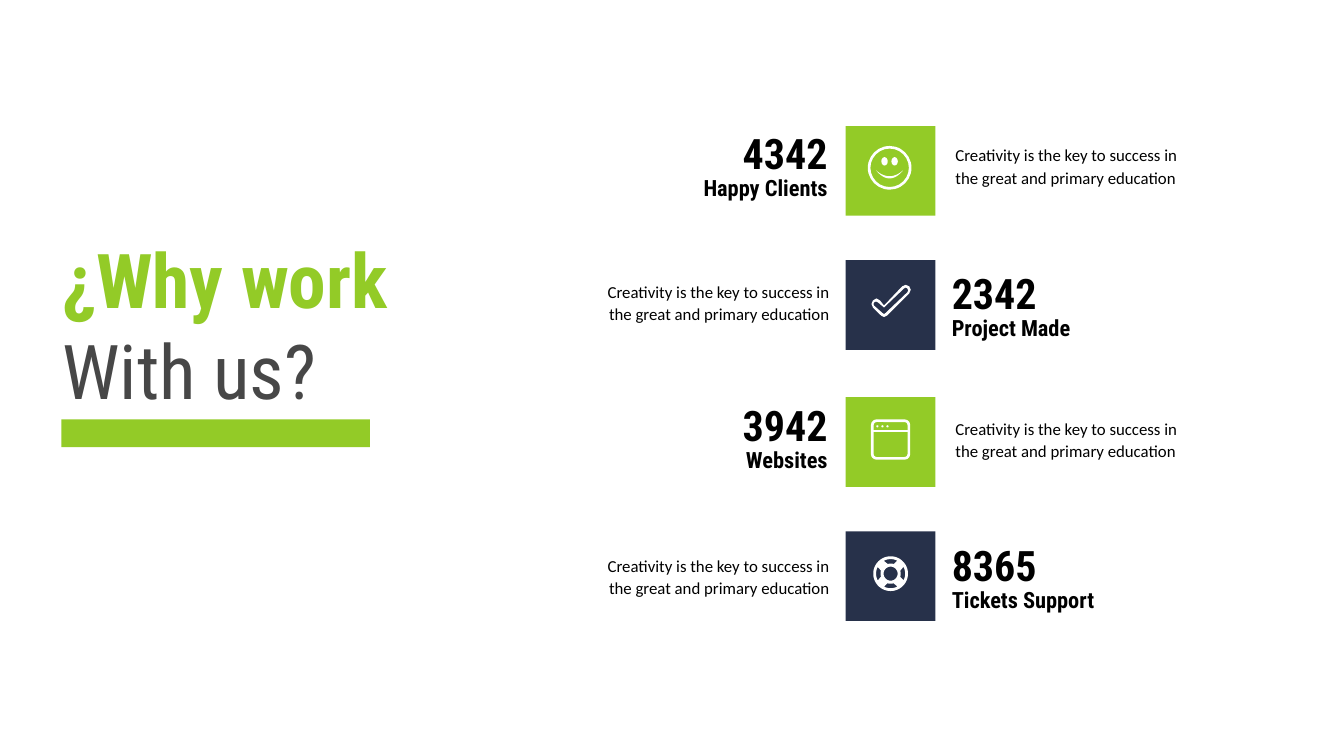
from math import cos, radians, sin

from lxml import etree
from pptx import Presentation
from pptx import util as u
from pptx.dml.color import RGBColor
from pptx.enum import shapes, text
from pptx.oxml.ns import qn

COLORS = {"green": "93CB27", "navy": "27314A", "white": "FFFFFF",
          "black": "000000", "gray": "474747"}
HEADING, BODY = "Roboto Condensed", "Calibri"
LEFT, RIGHT = text.PP_ALIGN.LEFT, text.PP_ALIGN.RIGHT
SHAPE = shapes.MSO_SHAPE
NOTE = "Creativity is the key to success in the great and primary education"
TILE, TILE_LEFT = 64.1, 604.1


class Deck:
    """Holds the style and the current slide; all lengths are in points."""

    def __init__(self, slide):
        self.slide = slide

    def color(self, name):
        return RGBColor.from_string(COLORS[name])

    def paint(self, shape, fill):
        shape.shadow.inherit = False
        shape.fill.solid()
        shape.fill.fore_color.rgb = self.color(fill)
        shape.line.fill.background()
        return shape

    def preset(self, kind, left, top, width, height, fill):
        shape = self.slide.shapes.add_shape(
            kind, u.Pt(left), u.Pt(top), u.Pt(width), u.Pt(height))
        return self.paint(shape, fill)

    def centred(self, kind, x, y, width, height, fill="white"):
        return self.preset(kind, x - width / 2, y - height / 2, width, height, fill)

    def outline(self, x, y, contours, fill="white"):
        """Closed contours given as offsets from (x, y); inner ones are holes."""
        builder = None
        for contour in contours:
            points = [((x + dx) * 100, (y + dy) * 100) for dx, dy in contour]
            if builder is None:
                builder = self.slide.shapes.build_freeform(*points[0], scale=u.Pt(1) / 100)
            else:
                builder.move_to(*points[0])
            builder.add_line_segments(points[1:], close=True)
        return self.paint(builder.convert_to_shape(), fill)

    def line(self, x1, y1, x2, y2, width, color="white"):
        connector = self.slide.shapes.add_connector(
            shapes.MSO_CONNECTOR.STRAIGHT, u.Pt(x1), u.Pt(y1), u.Pt(x2), u.Pt(y2))
        connector.line.width = u.Pt(width)
        connector.line.color.rgb = self.color(color)
        properties = connector._element.find(qn("p:spPr"))
        etree.SubElement(properties, qn("a:effectLst"))

    def run(self, paragraph, words, size, font, color, bold=False):
        run = paragraph.add_run()
        run.text = words
        run.font.size, run.font.name, run.font.bold = u.Pt(size), font, bold
        run.font.color.rgb = self.color(color)

    def frame(self, shape, inset_x=7.2, inset_y=3.6):
        frame = shape.text_frame
        frame.word_wrap = True
        frame.auto_size = text.MSO_AUTO_SIZE.NONE
        frame.vertical_anchor = text.MSO_ANCHOR.TOP
        frame.margin_left = frame.margin_right = u.Pt(inset_x)
        frame.margin_top = frame.margin_bottom = u.Pt(inset_y)
        return frame

    def textbox(self, left, top, width, height, words, size, font, align,
                bold=False, spacing=1.0, insets=(7.2, 3.6)):
        box = self.slide.shapes.add_textbox(
            u.Pt(left), u.Pt(top), u.Pt(width), u.Pt(height))
        paragraph = self.frame(box, *insets).paragraphs[0]
        paragraph.alignment, paragraph.line_spacing = align, spacing
        self.run(paragraph, words, size, font, "black", bold)

    def title(self, left, top, width, height, lines):
        title = self.slide.shapes.title
        title.left, title.top = u.Pt(left), u.Pt(top)
        title.width, title.height = u.Pt(width), u.Pt(height)
        frame = self.frame(title)
        for index, (words, color, bold) in enumerate(lines):
            paragraph = frame.add_paragraph() if index else frame.paragraphs[0]
            paragraph.alignment = LEFT
            self.run(paragraph, words, 54, HEADING, color, bold)


def arc(radius, start, end, step=5):
    direction = step if end > start else -step
    angles = range(start, end + direction, direction)
    return [(radius * cos(radians(a)), radius * sin(radians(a))) for a in angles]


# Icons, each drawn around the centre of its tile
def smile_icon(deck, x, y):
    x, y = x - 0.7, y - 2.2
    deck.centred(SHAPE.DONUT, x, y, 31.2, 31.2).adjustments[0] = 0.06
    for eye in (-3.6, 3.6):
        deck.centred(SHAPE.OVAL, x + eye, y - 4.6, 4.6, 6)
    steps = [i / 10 for i in range(-10, 11)]
    lower = [(9.7 * t, 1.8 + 5.8 * (1 - t * t)) for t in steps]
    upper = [(9.7 * t, 1.8 + 4.2 * (1 - t * t)) for t in reversed(steps)]
    deck.outline(x, y, [lower + upper])


def check_icon(deck, x, y):
    outer = [(13.3, -13.3), (10.8, -14.4), (8.3, -13.3), (-4.7, 0.4), (-7.6, -3.2),
             (-10.1, -4.7), (-12.6, -3.2), (-13.7, -0.7), (-12.6, 1.8), (-6.8, 7.6),
             (-4.7, 8.6), (-2.5, 7.6), (13.3, -8.3), (14.4, -10.8)]
    inner = [(11.9, -9), (-4, 6.1), (-4.7, 6.5), (-5.4, 6.1), (-11.9, 0.4),
             (-12.2, -0.7), (-11.9, -1.8), (-10.4, -2.5), (-9, -1.8), (-4.7, 1.8),
             (9.7, -11.9), (10.8, -12.4), (11.9, -11.9), (12.6, -10.4)]
    deck.outline(x, y, [outer, inner])


def browser_icon(deck, x, y):
    window = deck.centred(SHAPE.ROUNDED_RECTANGLE, x, y - 1.8, 26.2, 26.9)
    window.adjustments[0] = 0.12
    window.fill.background()
    window.line.width = u.Pt(1.9)
    window.line.color.rgb = deck.color("white")
    deck.line(x - 12.6, y - 7.9, x + 12.6, y - 7.9, 2)
    for dot in (-9.4, -5.8, -2.2):
        deck.centred(SHAPE.OVAL, x + dot, y - 11.2, 1.6, 1.6)


def buoy_icon(deck, x, y):
    slots = [arc(10.4, turn - 28, turn + 27) + arc(7.2, turn + 18, turn - 17)
             for turn in range(0, 360, 90)]
    deck.outline(x, y - 1.8, [arc(12.4, 0, 355), arc(5, 0, 355)] + slots)


STATISTICS = [("4342", "Happy Clients", "green", smile_icon),
              ("2342", "Project Made", "navy", check_icon),
              ("3942", "Websites", "green", browser_icon),
              ("8365", "Tickets Support", "navy", buoy_icon)]


def main():
    presentation = Presentation()
    presentation.slide_width, presentation.slide_height = u.Pt(960), u.Pt(540)
    deck = Deck(presentation.slides.add_slide(presentation.slide_layouts[5]))

    # Title with its underline bar
    deck.title(37.4, 162.7, 293.8, 138.2,
               [("¿Why work", "green", True), ("With us?", "gray", False)])
    deck.preset(SHAPE.RECTANGLE, 43.9, 299.5, 220.3, 19.8, "green")

    # Statistics: number and note swap sides from row to row
    for row, (number, label, color, icon) in enumerate(STATISTICS):
        pair, second = divmod(row, 2)
        tile_top = 90 + 193.7 * pair + 95.8 * second
        deck.preset(SHAPE.RECTANGLE, TILE_LEFT, tile_top, TILE, TILE, color)
        icon(deck, TILE_LEFT + TILE / 2, tile_top + TILE / 2)

        number_left, note_left = (672.8, 416.2) if second else (468.3, 673.9)
        number_align, note_align = (LEFT, RIGHT) if second else (RIGHT, LEFT)
        number_top = 87.8 + 194.4 * pair + 99.7 * second
        deck.textbox(number_left, number_top, 130, 43.6, number, 30, HEADING,
                     number_align, bold=True)
        deck.textbox(number_left, number_top + 33.3, 130, 26.6, label, 16, HEADING,
                     number_align, bold=True)
        deck.textbox(note_left, 97.9 + 97.7 * row, 185, 39.6, NOTE, 12, BODY,
                     note_align, spacing=1.1, insets=(8.6, 4.3))

    presentation.save("out.pptx")


if __name__ == "__main__":
    main()
